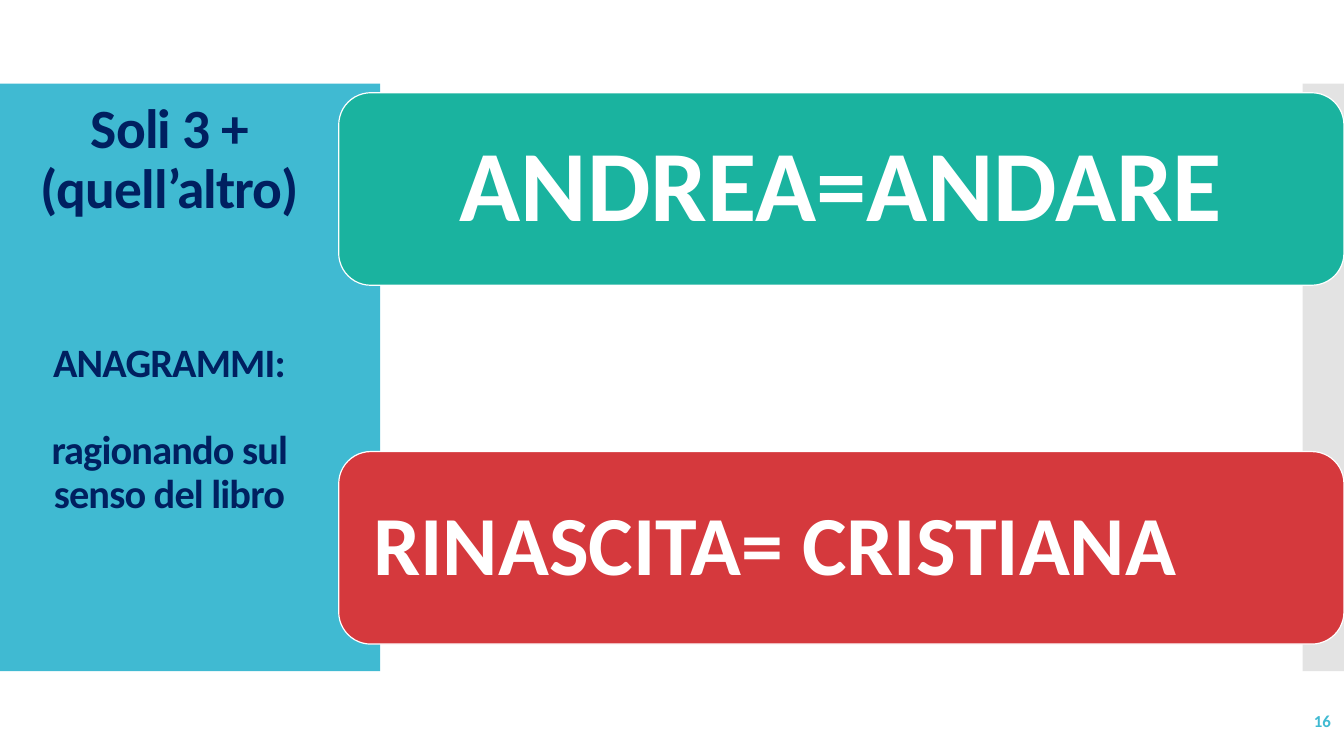
from lxml import etree
from pptx import Presentation
from pptx.dml.color import RGBColor
from pptx.enum import shapes, text
from pptx.oxml.ns import qn
from pptx.util import Inches, Pt

# Content: title lines as (text, size name, space before in points)
TITLE_LINES = [
    ("Soli 3 + (quell’altro)", "title", 0),
    ("ANAGRAMMI:", "subtitle", 87),
    ("ragionando sul senso del libro", "subtitle", 31.6),
]
# Anagram cards: text, fill, size name, alignment, inset
CARDS = [
    ("ANDREA=ANDARE", "green", "large", text.PP_ALIGN.CENTER, 0.3),
    ("RINASCITA= CRISTIANA", "red", "medium", text.PP_ALIGN.JUSTIFY, 0.25),
]
SLIDE_NUMBER = "16"

THEME = {
    "font": "Calibri",
    "colors": {"blue": "40BAD2", "grey": "C8C8C8", "navy": "002060",
               "green": "1AB39F", "red": "D5393D", "white": "FFFFFF"},
    "sizes": {"title": 39.6, "subtitle": 28.8, "large": 72, "medium": 60,
              "number": 12},
}

SLIDE_WIDTH, SLIDE_HEIGHT = 13.33, 7.5
BAND_TOP, BAND_HEIGHT = 0.83, 5.83
CARD_LEFT, CARD_TOP, CARD_HEIGHT, CARD_PITCH = 3.36, 0.92, 1.91, 3.56


def color(name):
    return RGBColor.from_string(THEME["colors"][name])


def add_block(slide, kind, left, top, width, height, fill):
    shape = slide.shapes.add_shape(
        kind, Inches(left), Inches(top), Inches(width), Inches(height))
    shape.shadow.inherit = False
    shape.fill.solid()
    shape.fill.fore_color.rgb = color(fill)
    shape.line.fill.background()
    return shape


def setup_frame(shape, inset=None):
    frame = shape.text_frame
    frame.word_wrap = True
    frame.auto_size = text.MSO_AUTO_SIZE.NONE
    frame.vertical_anchor = text.MSO_ANCHOR.MIDDLE
    if inset is not None:
        frame.margin_left = frame.margin_right = Inches(inset)
        frame.margin_top = frame.margin_bottom = Inches(inset)
    return frame


def write(paragraph, words, size, ink, align, line_spacing=0.9):
    paragraph.alignment = align
    paragraph.line_spacing = line_spacing
    run = paragraph.add_run()
    run.text = words
    run.font.name = THEME["font"]
    run.font.size = Pt(THEME["sizes"][size])
    run.font.bold = True
    run.font.color.rgb = color(ink)
    return run


def add_bands(slide):
    rectangle = shapes.MSO_SHAPE.RECTANGLE
    add_block(slide, rectangle, 0, BAND_TOP, 3.77, BAND_HEIGHT, "blue")
    edge = add_block(slide, rectangle, 12.92, BAND_TOP, SLIDE_WIDTH - 12.92,
                     BAND_HEIGHT, "grey")
    fill_color = edge.fill._xPr.find(qn("a:solidFill"))[0]
    etree.SubElement(fill_color, qn("a:alpha"), val="50000")


def add_title(slide):
    title = slide.shapes.title
    title.left, title.top = Inches(0), Inches(1.13)
    title.width, title.height = Inches(3.36), Inches(3.87)
    frame = setup_frame(title)
    for index, (words, size, before) in enumerate(TITLE_LINES):
        paragraph = frame.add_paragraph() if index else frame.paragraphs[0]
        paragraph.space_before = Pt(before)
        run = write(paragraph, words, size, "navy", text.PP_ALIGN.CENTER)
        run.font._element.set("spc", "-60")
    # Bring the title in front of the bands
    slide.shapes._spTree.append(title._element)


def add_cards(slide):
    for index, (words, fill, size, align, inset) in enumerate(CARDS):
        card = add_block(slide, shapes.MSO_SHAPE.ROUNDED_RECTANGLE, CARD_LEFT,
                         CARD_TOP + index * CARD_PITCH,
                         SLIDE_WIDTH - CARD_LEFT, CARD_HEIGHT, fill)
        card.line.color.rgb = color("white")
        card.line.width = Pt(0.85)
        frame = setup_frame(card, inset)
        write(frame.paragraphs[0], words, size, "white", align)


def add_slide_number(slide):
    box = slide.shapes.add_textbox(
        Inches(11.63), Inches(6.95), Inches(1.67), Inches(0.4))
    frame = setup_frame(box)
    write(frame.paragraphs[0], SLIDE_NUMBER, "number", "blue",
          text.PP_ALIGN.RIGHT, 1.0)


def main():
    presentation = Presentation()
    presentation.slide_width = Inches(SLIDE_WIDTH)
    presentation.slide_height = Inches(SLIDE_HEIGHT)
    slide = presentation.slides.add_slide(presentation.slide_layouts[5])
    add_bands(slide)
    add_title(slide)
    add_cards(slide)
    add_slide_number(slide)
    presentation.save("out.pptx")


if __name__ == "__main__":
    main()
